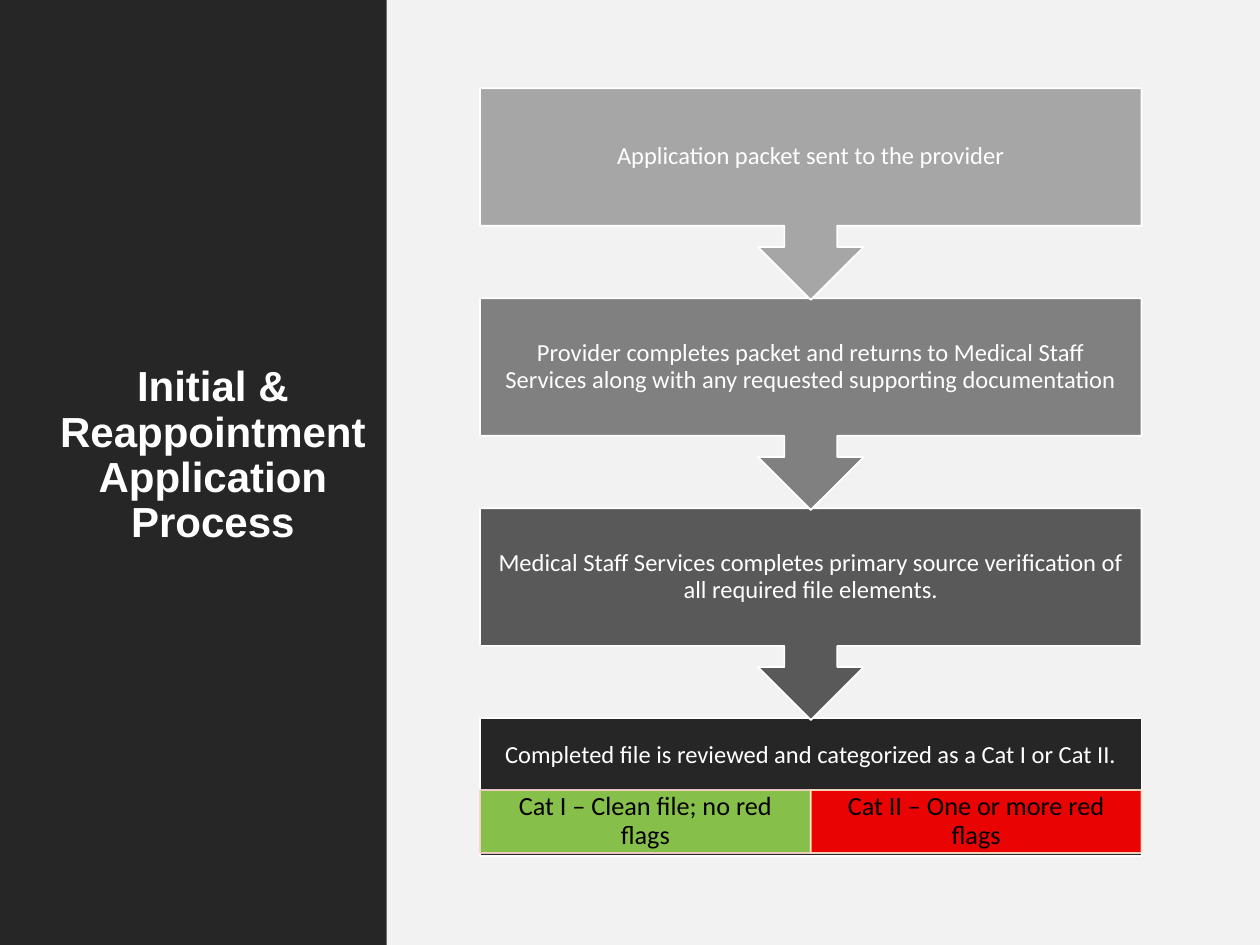
from lxml.etree import SubElement
from pptx import Presentation
from pptx.dml.color import RGBColor
from pptx.enum.shapes import MSO_SHAPE as Shape
from pptx.enum.text import MSO_ANCHOR as Anchor, MSO_AUTO_SIZE as AutoSize, PP_ALIGN as Align
from pptx.oxml.ns import qn
from pptx.util import Inches, Pt

WHITE = RGBColor(0xFF, 0xFF, 0xFF)
BLACK = RGBColor(0x00, 0x00, 0x00)
CHARCOAL = RGBColor(0x26, 0x26, 0x26)
PALE_GRAY = RGBColor(0xF2, 0xF2, 0xF2)
LIGHT_GRAY = RGBColor(0xA6, 0xA6, 0xA6)
MID_GRAY = RGBColor(0x80, 0x80, 0x80)
DARK_GRAY = RGBColor(0x59, 0x59, 0x59)
GREEN = RGBColor(0x92, 0xD0, 0x50)
RED = RGBColor(0xFF, 0x00, 0x00)
PINK_EDGE = RGBColor(0xFA, 0xD2, 0xCF)
CREAM_EDGE = RGBColor(0xFE, 0xE6, 0xCC)

# Content
TITLE = "Initial & Reappointment Application Process"
STEPS = [
    ("Application packet sent to the provider", LIGHT_GRAY),
    ("Provider completes packet and returns to Medical Staff Services "
     "along with any requested supporting documentation", MID_GRAY),
    ("Medical Staff Services completes primary source verification "
     "of all required file elements.", DARK_GRAY),
]
REVIEW = "Completed file is reviewed and categorized as a Cat I or Cat II."
CATEGORIES = [
    ("Cat I – Clean file; no red flags", GREEN, PINK_EDGE),
    ("Cat II – One or more red flags", RED, CREAM_EDGE),
]

# Layout, in inches
SLIDE_WIDTH, SLIDE_HEIGHT, PANEL_WIDTH = 10, 7.5, 3.07
FLOW_LEFT, FLOW_TOP, FLOW_WIDTH = 3.81, 0.7, 5.25
STEP_PITCH, CALLOUT_HEIGHT, BOX_HEIGHT = 1.667, 1.68, 1.09
REVIEW_TEXT_HEIGHT = 0.59
CATEGORY_TOP, CATEGORY_HEIGHT = 6.27, 0.5


def set_opacity(color_format_parent, percent):
    for color in color_format_parent.iter(qn("a:srgbClr")):
        SubElement(color, qn("a:alpha"), val=str(percent * 1000))


def add_block(slide, kind, box, fill, line=None, opacity=100):
    shape = slide.shapes.add_shape(kind, *map(Inches, box))
    shape.shadow.inherit = False
    shape.fill.solid()
    shape.fill.fore_color.rgb = fill
    if line is None:
        shape.line.fill.background()
    else:
        shape.line.color.rgb = line
        shape.line.width = Pt(1)
    if opacity < 100:
        set_opacity(shape.element.spPr, opacity)
    return shape


def write_text(frame, text, font, size, color, bold=False):
    frame.word_wrap = True
    frame.auto_size = AutoSize.NONE
    paragraph = frame.paragraphs[0]
    paragraph.alignment = Align.CENTER
    paragraph.line_spacing = 0.9
    run = paragraph.add_run()
    run.text = text
    run.font.name = font
    run.font.size = Pt(size)
    run.font.bold = bold
    run.font.color.rgb = color


def add_label(slide, box, text, size=14, color=WHITE, insets=(0.11, 0.11)):
    frame = slide.shapes.add_textbox(*map(Inches, box)).text_frame
    frame.vertical_anchor = Anchor.MIDDLE
    frame.margin_left = frame.margin_right = Inches(insets[0])
    frame.margin_top = frame.margin_bottom = Inches(insets[1])
    write_text(frame, text, "Calibri", size, color)


def main():
    presentation = Presentation()
    presentation.slide_width = Inches(SLIDE_WIDTH)
    presentation.slide_height = Inches(SLIDE_HEIGHT)
    slide = presentation.slides.add_slide(presentation.slide_layouts[5])

    # Side panels
    add_block(slide, Shape.RECTANGLE,
              (PANEL_WIDTH, 0, SLIDE_WIDTH - PANEL_WIDTH, SLIDE_HEIGHT), PALE_GRAY)
    add_block(slide, Shape.RECTANGLE, (0, 0, PANEL_WIDTH, SLIDE_HEIGHT), CHARCOAL)

    # Title, brought in front of the panels
    title = slide.shapes.title
    title.left, title.top = Inches(0.31), Inches(2.85)
    title.width, title.height = Inches(2.76), Inches(3.68)
    title.text_frame.vertical_anchor = Anchor.TOP
    write_text(title.text_frame, TITLE, "Arial", 24, WHITE, bold=True)
    title.element.getparent().append(title.element)

    # Final review box
    review_top = FLOW_TOP + len(STEPS) * STEP_PITCH
    add_block(slide, Shape.RECTANGLE,
              (FLOW_LEFT, review_top, FLOW_WIDTH, BOX_HEIGHT), CHARCOAL, WHITE)
    add_label(slide, (FLOW_LEFT, review_top, FLOW_WIDTH, REVIEW_TEXT_HEIGHT), REVIEW)

    # Category cells
    category_width = FLOW_WIDTH / len(CATEGORIES)
    for index, (text, fill, edge) in enumerate(CATEGORIES):
        box = (FLOW_LEFT + index * category_width, CATEGORY_TOP,
               category_width, CATEGORY_HEIGHT)
        add_block(slide, Shape.RECTANGLE, box, fill, edge, opacity=90)
        add_label(slide, box, text, 15, BLACK, insets=(0.12, 0.02))

    # Step callouts, last first so that each arrow overlaps the next box
    for index, (text, fill) in reversed(list(enumerate(STEPS))):
        top = FLOW_TOP + index * STEP_PITCH
        callout = add_block(slide, Shape.UP_ARROW_CALLOUT,
                            (FLOW_LEFT, top, FLOW_WIDTH, CALLOUT_HEIGHT), fill, WHITE)
        callout.rotation = 180
        add_label(slide, (FLOW_LEFT, top, FLOW_WIDTH, BOX_HEIGHT), text)

    presentation.save("out.pptx")


if __name__ == "__main__":
    main()
